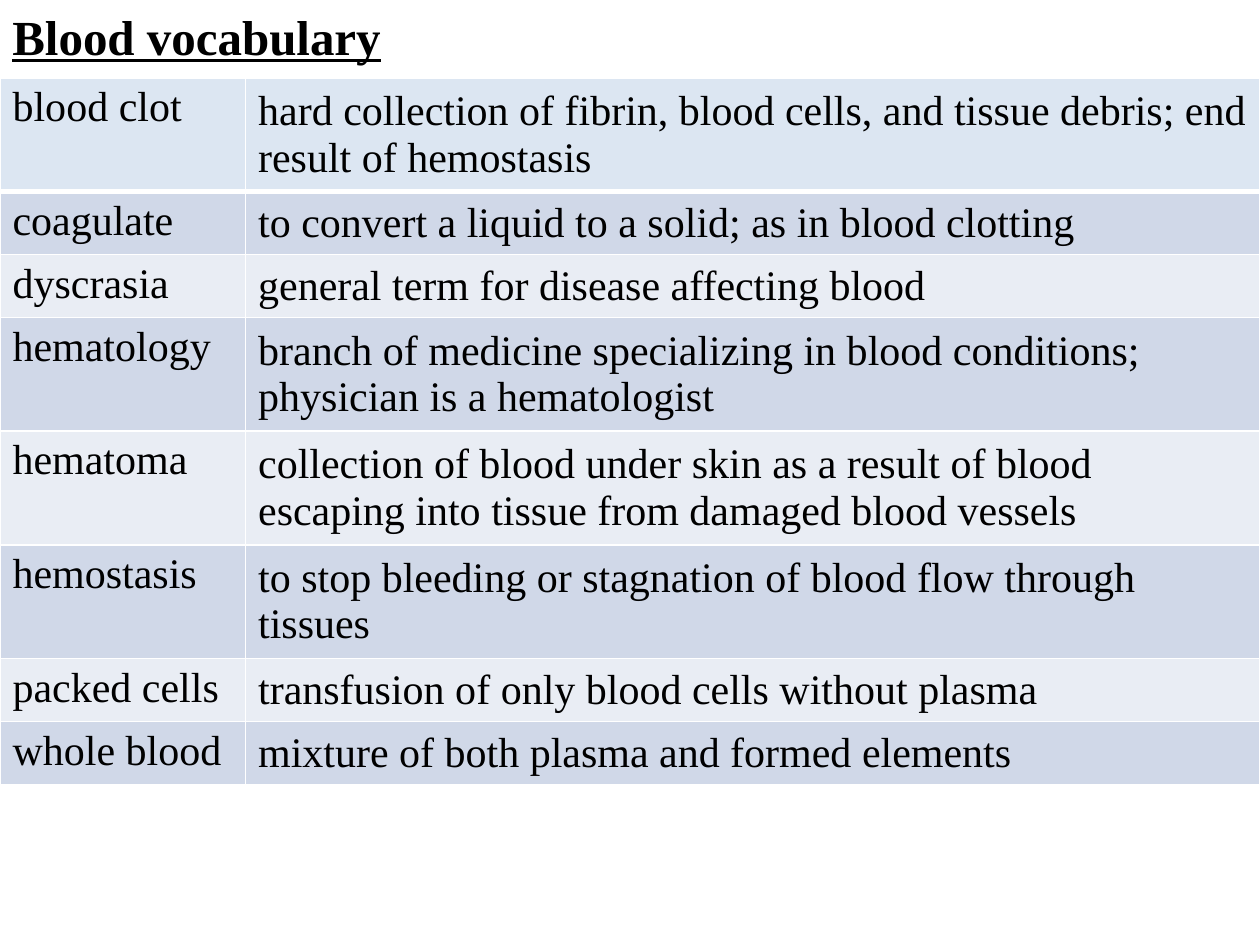
from dataclasses import dataclass

from lxml.etree import SubElement
from pptx import Presentation
from pptx.dml.color import RGBColor as Rgb
from pptx.enum.text import MSO_ANCHOR as Anchor
from pptx.oxml.ns import qn
from pptx.util import Cm, Pt


@dataclass(frozen=True)
class Theme:
    font: str = "Times New Roman"
    text: str = "000000"
    border: str = "FFFFFF"
    first_row: str = "DCE6F2"
    bands: tuple = ("E9EDF4", "D0D8E8")
    title_size: int = 28
    body_size: int = 24
    thin: int = 1
    thick: int = 3


THEME = Theme()
PAGE_WIDTH, PAGE_HEIGHT = 25.4, 19.05
TERM_WIDTH = 4.95
TABLE_TOP = 1.57
LINE_ROW, TWO_LINE_ROW = 1.27, 2.29

# Term, definition, row height
VOCABULARY = [
    ("blood clot", "hard collection of fibrin, blood cells, and tissue debris; "
     "end result of hemostasis", TWO_LINE_ROW),
    ("coagulate", "to convert a liquid to a solid; as in blood clotting", LINE_ROW),
    ("dyscrasia", "general term for disease affecting blood", LINE_ROW),
    ("hematology", "branch of medicine specializing in blood conditions; "
     "physician is a hematologist", TWO_LINE_ROW),
    ("hematoma", "collection of blood under skin as a result of blood escaping "
     "into tissue from damaged blood vessels", TWO_LINE_ROW),
    ("hemostasis", "to stop bleeding or stagnation of blood flow through tissues",
     TWO_LINE_ROW),
    ("packed cells", "transfusion of only blood cells without plasma", LINE_ROW),
    ("whole blood", "mixture of both plasma and formed elements", LINE_ROW),
]


def write_text(frame, text, *, size=THEME.body_size, bold=False, underline=False):
    frame.word_wrap = True
    span = frame.paragraphs[0].add_run()
    span.text = text
    font = span.font
    font.name, font.size = THEME.font, Pt(size)
    font.bold, font.underline = bold, underline
    font.color.rgb = Rgb.from_string(THEME.text)


def set_borders(cell, **widths):
    """Draw the sides L, R, T and B in the given point widths."""
    properties = cell._tc.get_or_add_tcPr()
    for side, width in widths.items():
        line = SubElement(properties, qn(f"a:ln{side}"), w=str(Pt(width)))
        fill = SubElement(line, qn("a:solidFill"))
        SubElement(fill, qn("a:srgbClr"), val=THEME.border)


def add_title(page, text):
    box = page.shapes.add_textbox(0, 0, Cm(PAGE_WIDTH), Cm(2.64))
    write_text(box.text_frame, text, size=THEME.title_size, bold=True, underline=True)


def format_cell(cell, row_index, text, anchor):
    set_borders(cell, L=THEME.thin, R=THEME.thin,
                T=THEME.thick if row_index == 1 else THEME.thin,
                B=THEME.thick if row_index == 0 else THEME.thin)
    color = THEME.bands[row_index % 2] if row_index else THEME.first_row
    cell.fill.solid()
    cell.fill.fore_color.rgb = Rgb.from_string(color)
    cell.vertical_anchor = anchor
    write_text(cell.text_frame, text)


def add_vocabulary_table(page, entries):
    height = sum(row_height for _, _, row_height in entries)
    table = page.shapes.add_table(len(entries), 2, 0, Cm(TABLE_TOP),
                                  Cm(PAGE_WIDTH), Cm(height)).table
    table.columns[0].width = Cm(TERM_WIDTH)
    table.columns[1].width = Cm(PAGE_WIDTH - TERM_WIDTH)
    for index, (term, definition, row_height) in enumerate(entries):
        table.rows[index].height = Cm(row_height)
        format_cell(table.cell(index, 0), index, term, Anchor.TOP)
        format_cell(table.cell(index, 1), index, definition, Anchor.MIDDLE)


def main():
    deck = Presentation()
    deck.slide_width, deck.slide_height = Cm(PAGE_WIDTH), Cm(PAGE_HEIGHT)
    page = deck.slides.add_slide(deck.slide_layouts[6])
    add_title(page, "Blood vocabulary")
    add_vocabulary_table(page, VOCABULARY)
    deck.save("out.pptx")


if __name__ == "__main__":
    main()
